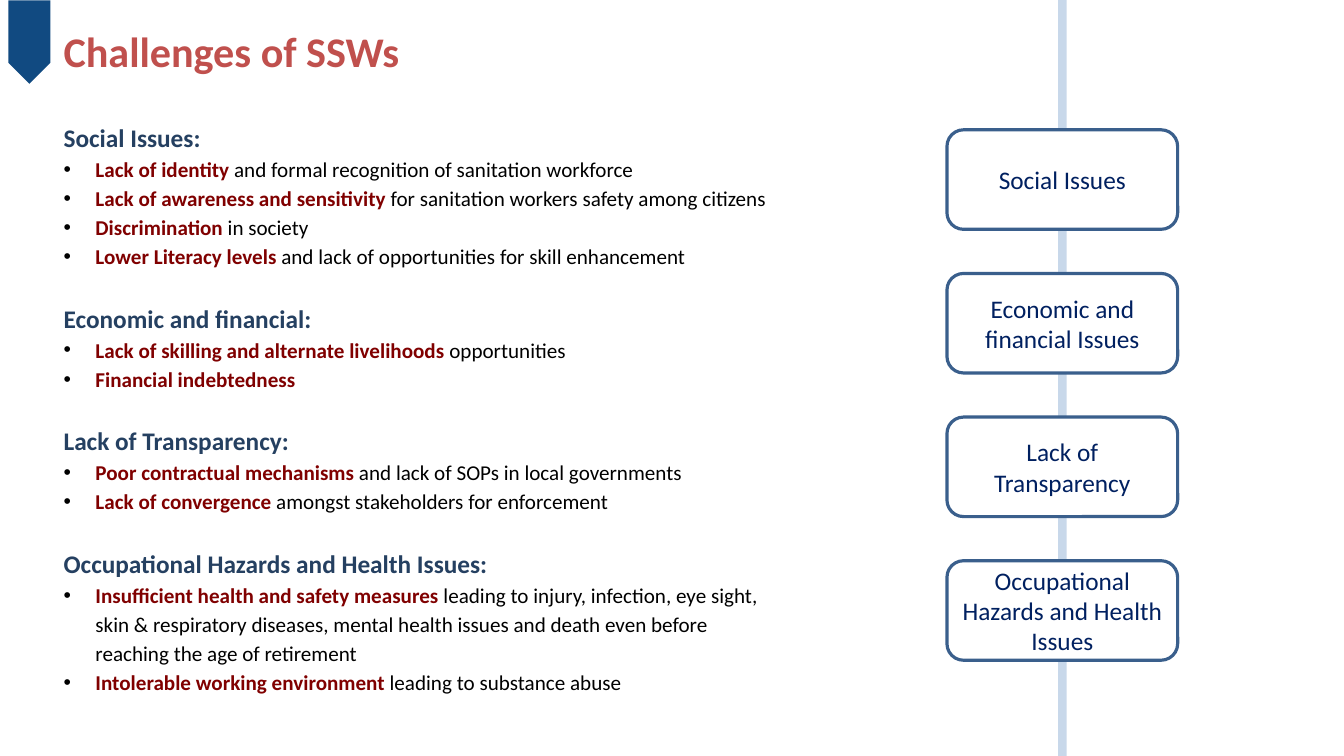
from lxml.etree import SubElement
from pptx import Presentation
from pptx.dml.color import RGBColor
from pptx.enum.shapes import MSO_CONNECTOR, MSO_SHAPE
from pptx.enum.text import MSO_ANCHOR, MSO_AUTO_SIZE, PP_ALIGN
from pptx.oxml.ns import qn
from pptx.util import Inches, Pt

COLORS = {
    "flag": "114A81", "title": "C0504D", "heading": "254061", "key": "800000",
    "text": "000000", "rail": "4B7EBC", "border": "3A5F8C", "label": "002060",
    "white": "FFFFFF",
}

# Each section: heading, label of its box, bullets as (key phrase, rest)
SECTIONS = [
    ("Social Issues:", "Social Issues", [
        ("Lack of identity", " and formal recognition of sanitation workforce"),
        ("Lack of awareness and sensitivity",
         " for sanitation workers safety among citizens"),
        ("Discrimination", " in society"),
        ("Lower Literacy levels",
         " and lack of opportunities for skill enhancement"),
    ]),
    ("Economic and financial:", "Economic and financial Issues", [
        ("Lack of skilling and alternate livelihoods", " opportunities"),
        ("Financial indebtedness", ""),
    ]),
    ("Lack of Transparency:", "Lack of Transparency", [
        ("Poor contractual mechanisms", " and lack of SOPs in local governments"),
        ("Lack of convergence", " amongst stakeholders for enforcement"),
    ]),
    ("Occupational Hazards and Health Issues:",
     "Occupational Hazards and Health Issues", [
         ("Insufficient health and safety measures",
          " leading to injury, infection, eye sight, skin & respiratory diseases, "
          "mental health issues and death even before reaching the age of retirement"),
         ("Intolerable working environment", " leading to substance abuse"),
     ]),
]

deck = Presentation()
deck.slide_width, deck.slide_height = Inches(17.71), Inches(9.96)
COLUMN, ROW = deck.slide_width / 24, deck.slide_height / 24
page = deck.slides.add_slide(deck.slide_layouts[1])


def grid(left, top, width, height):
    """Turn columns and rows of the 24 by 24 grid into slide lengths."""
    return int(left * COLUMN), int(top * ROW), int(width * COLUMN), int(height * ROW)


def write(para, text, size=20, color="text", bold=False):
    span = para.add_run()
    span.text = text
    span.font.name = "Calibri"
    span.font.size = Pt(size)
    span.font.bold = bold
    span.font.color.rgb = RGBColor.from_string(COLORS[color])


# Title with its flag
flag = page.shapes.add_shape(MSO_SHAPE.PENTAGON, *grid(-0.22, 0.67, 1.49, 1.33))
flag.rotation = 90
flag.shadow.inherit = False
flag.fill.solid()
flag.fill.fore_color.rgb = RGBColor.from_string(COLORS["flag"])
flag.line.fill.background()

title = page.shapes.title
title.left, title.top, title.width, title.height = grid(1, 0.55, 9.27, 2.1)
title.text_frame.auto_size = MSO_AUTO_SIZE.NONE
title.text_frame.vertical_anchor = MSO_ANCHOR.MIDDLE
title_para = title.text_frame.paragraphs[0]
title_para.alignment = PP_ALIGN.LEFT
write(title_para, "Challenges of SSWs", size=40, color="title", bold=True)

# Headings and bullets
body = page.placeholders[1]
body.left, body.top, body.width, body.height = grid(1, 3.61, 13.16, 18.72)
body.text_frame.auto_size = MSO_AUTO_SIZE.NONE
for number, (heading, _, bullets) in enumerate(SECTIONS):
    para = body.text_frame.add_paragraph() if number else body.text_frame.paragraphs[0]
    para.line_spacing = 1.15
    para.space_before = Pt(28 if number else 0)
    properties = para._p.get_or_add_pPr()
    properties.set("marL", "0")
    properties.set("indent", "0")
    SubElement(properties, qn("a:buNone"))
    write(para, heading, size=24, color="heading", bold=True)

    for key, rest in bullets:
        para = body.text_frame.add_paragraph()
        para.line_spacing = 1.15
        para.space_before = Pt(0)
        properties = para._p.get_or_add_pPr()
        properties.set("marL", str(Inches(0.42)))
        properties.set("indent", str(-Inches(0.42)))
        bullet_color = SubElement(properties, qn("a:buClr"))
        SubElement(bullet_color, qn("a:srgbClr"), val=COLORS["text"])
        SubElement(properties, qn("a:buFont"), typeface="Arial")
        SubElement(properties, qn("a:buChar"), char="•")
        write(para, key, color="key", bold=True)
        if rest:
            write(para, rest)

# Rail with one box per section
RAIL, BOX_WIDTH, BOX_HEIGHT, BOX_TOP, BOX_PITCH = 18.97, 4.12, 3.16, 4.12, 4.56
rail_x = int(RAIL * COLUMN)
rail = page.shapes.add_connector(
    MSO_CONNECTOR.STRAIGHT, rail_x, 0, rail_x, deck.slide_height)
rail.line.width = Pt(8)
rail.line.color.rgb = RGBColor.from_string(COLORS["rail"])
rail_color = rail.line._ln.find(".//" + qn("a:srgbClr"))
SubElement(rail_color, qn("a:alpha"), val="29000")
SubElement(rail._element.spPr, qn("a:effectLst"))

for number, (_, label, _) in enumerate(SECTIONS):
    box = page.shapes.add_shape(MSO_SHAPE.ROUNDED_RECTANGLE, *grid(
        RAIL - BOX_WIDTH / 2, BOX_TOP + number * BOX_PITCH, BOX_WIDTH, BOX_HEIGHT))
    box.shadow.inherit = False
    box.fill.solid()
    box.fill.fore_color.rgb = RGBColor.from_string(COLORS["white"])
    box.line.width = Pt(3)
    box.line.color.rgb = RGBColor.from_string(COLORS["border"])
    box.text_frame.word_wrap = True
    box.text_frame.vertical_anchor = MSO_ANCHOR.MIDDLE
    label_para = box.text_frame.paragraphs[0]
    label_para.alignment = PP_ALIGN.CENTER
    write(label_para, label, size=24, color="label")

deck.save("out.pptx")
